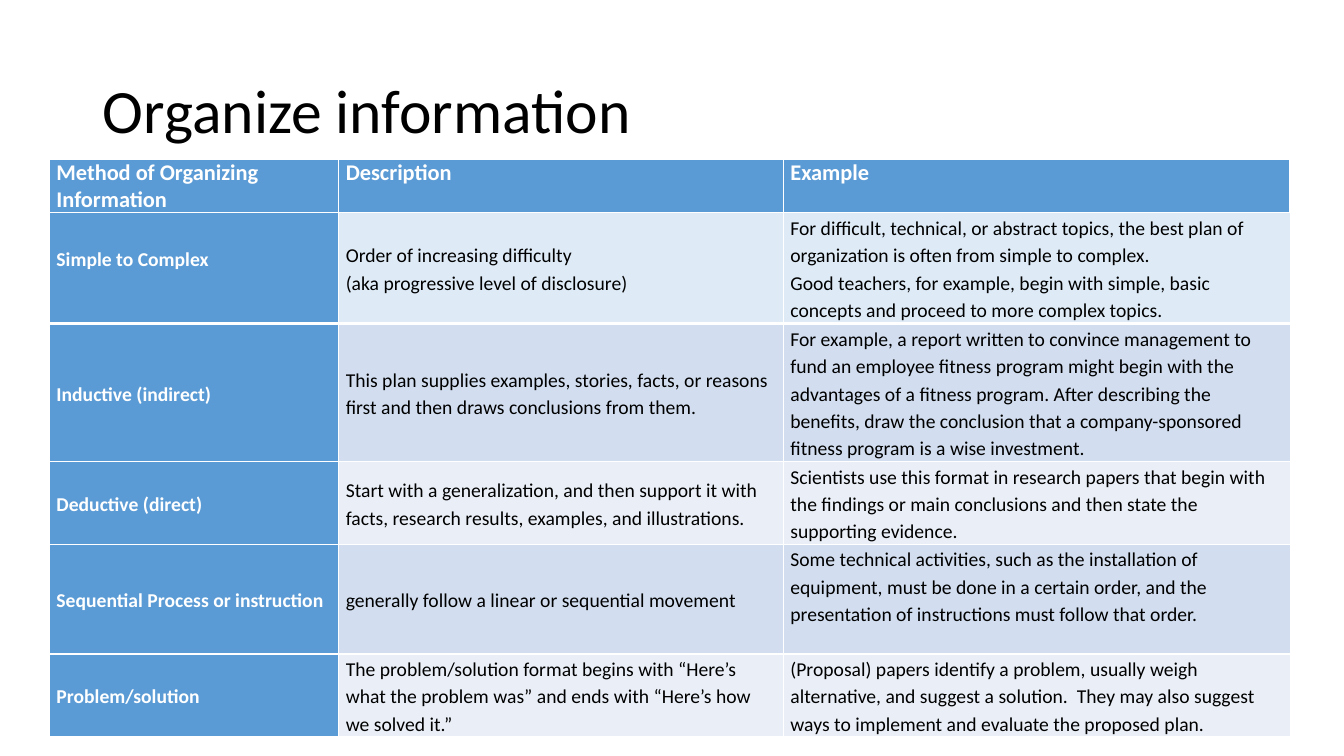
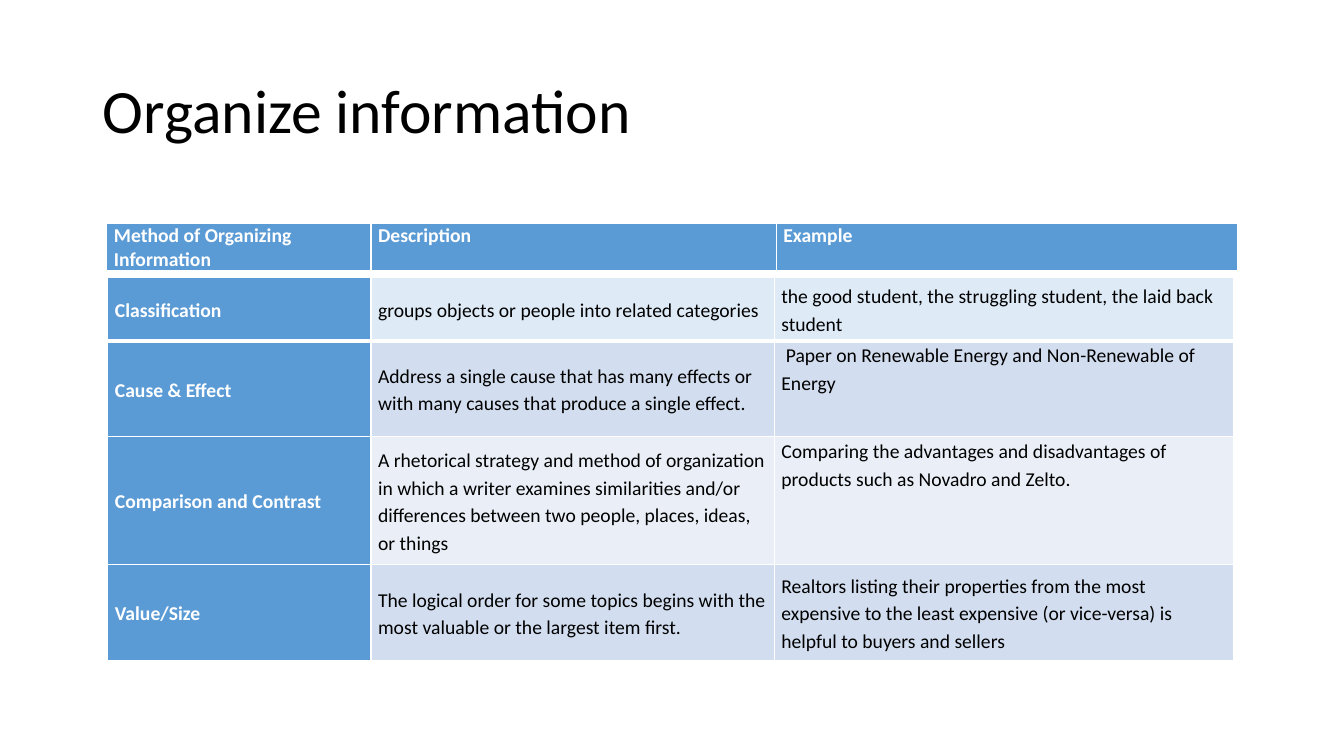
from dataclasses import dataclass

import pptx
import pptx.dml.color
import pptx.enum.text
import pptx.oxml.ns
import pptx.util
from lxml import etree

Inches, Pt = pptx.util.Inches, pptx.util.Pt
MSO_ANCHOR = pptx.enum.text.MSO_ANCHOR

# Shared look
COLORS = {
    "accent": "5B9BD5",
    "first": "DEEBF7",
    "dark_band": "D2DEEF",
    "light_band": "EAEFF7",
    "text": "000000",
    "white": "FFFFFF",
}
FONT = "Calibri"
TITLE = "Organize information"
TITLE_BOX = {"left": 0.92, "top": 0.4, "width": 11.5, "height": 1.45}
HEADINGS = ("Method of Organizing Information", "Description", "Example")
THIN, THICK = 1, 3


@dataclass
class Cell:
    text: str
    anchor: MSO_ANCHOR = MSO_ANCHOR.MIDDLE
    below: float = 0  # bottom margin in inches


@dataclass
class Row:
    height: float
    cells: tuple[Cell, ...]


@dataclass
class Grid:
    left: float
    top: float
    cols: tuple[float, ...]
    rows: list[Row]
    size: int = 14
    is_header: bool = False


def rgb(name: str) -> pptx.dml.color.RGBColor:
    return pptx.dml.color.RGBColor.from_string(COLORS[name])


def set_all(obj, values: dict) -> None:
    for key, value in values.items():
        setattr(obj, key, value)


def style_font(font, size: int, color: str, bold: bool = False) -> None:
    set_all(font, {"name": FONT, "size": Pt(size), "bold": bold})
    font.color.rgb = rgb(color)


def set_borders(cell, top: float, bottom: float) -> None:
    tc_pr = cell._tc.get_or_add_tcPr()
    qn = pptx.oxml.ns.qn
    for side, width in {"L": THIN, "R": THIN, "T": top, "B": bottom}.items():
        ln = etree.SubElement(tc_pr, qn(f"a:ln{side}"), w=str(int(Pt(width))))
        fill = etree.SubElement(ln, qn("a:solidFill"))
        etree.SubElement(fill, qn("a:srgbClr"), val=COLORS["white"])


def row_fill(index: int) -> str:
    if index == 0:
        return "first"
    return "dark_band" if index % 2 else "light_band"


def add_title(slide) -> None:
    sp = slide.shapes.title
    set_all(sp, {key: Inches(value) for key, value in TITLE_BOX.items()})
    tf = sp.text_frame
    tf.text = TITLE
    set_all(tf, {"word_wrap": True, "vertical_anchor": MSO_ANCHOR.MIDDLE,
                 "auto_size": pptx.enum.text.MSO_AUTO_SIZE.NONE})
    p = tf.paragraphs[0]
    set_all(p, {"alignment": pptx.enum.text.PP_ALIGN.LEFT, "line_spacing": 0.9})
    style_font(p.runs[0].font, 44, "text")


def fill_cell(cell, content: Cell, grid: Grid, i: int, j: int) -> None:
    label = grid.is_header or j == 0
    # Heavy rule under the heading and under the first body row
    set_borders(cell, THICK if i == 1 else THIN, THICK if i == 0 else THIN)
    cell.fill.solid()
    cell.fill.fore_color.rgb = rgb("accent" if label else row_fill(i))
    set_all(cell, {
        "margin_left": Inches(0.07), "margin_right": Inches(0.07),
        "margin_top": 0, "margin_bottom": Inches(content.below),
        "vertical_anchor": content.anchor,
    })
    cell.text_frame.text = content.text
    spacing = {"space_before": Pt(3)} if grid.is_header else {"line_spacing": 1.15}
    for p in cell.text_frame.paragraphs:
        set_all(p, spacing)
        for r in p.runs:
            style_font(r.font, grid.size, "white" if label else "text", label)


def add_grid(slide, grid: Grid) -> None:
    height = sum(row.height for row in grid.rows)
    table = slide.shapes.add_table(
        len(grid.rows), len(grid.cols), Inches(grid.left), Inches(grid.top),
        Inches(sum(grid.cols)), Inches(height)).table
    set_all(table, {"first_row": grid.is_header, "horz_banding": False})
    for j, width in enumerate(grid.cols):
        table.columns[j].width = Inches(width)
    for i, row in enumerate(grid.rows):
        table.rows[i].height = Inches(row.height)
        for j, content in enumerate(row.cells):
            fill_cell(table.cell(i, j), content, grid, i, j)


def header(left: float, top: float, cols: tuple[float, ...], height: float,
           size: int) -> Grid:
    cells = tuple(Cell(text, MSO_ANCHOR.TOP) for text in HEADINGS)
    return Grid(left, top, cols, [Row(height, cells)], size, True)


# Slide content: heading table, then body table
SLIDES = [
    (
        header(0.49, 1.58, (2.87, 4.41, 5.02), 0.53, 16),
        Grid(0.49, 2.11, (2.87, 4.41, 5.03), [
            Row(1.1, (
                Cell("Simple to Complex", below=0.2),
                Cell("Order of increasing difficulty\n"
                     "(aka progressive level of disclosure)"),
                Cell("For difficult, technical, or abstract topics, the best plan of "
                     "organization is often from simple to complex.\n"
                     "Good teachers, for example, begin with simple, basic concepts "
                     "and proceed to more complex topics."))),
            Row(1.37, (
                Cell("Inductive (indirect)"),
                Cell("This plan supplies examples, stories, facts, or reasons first "
                     "and then draws conclusions from them."),
                Cell("For example, a report written to convince management to fund an "
                     "employee fitness program might begin with the advantages of a "
                     "fitness program. After describing the benefits, draw the "
                     "conclusion that a company-sponsored fitness program is a wise "
                     "investment."))),
            Row(0.82, (
                Cell("Deductive (direct)"),
                Cell("Start with a generalization, and then support it with facts, "
                     "research results, examples, and illustrations."),
                Cell("Scientists use this format in research papers that begin with "
                     "the findings or main conclusions and then state the supporting "
                     "evidence."))),
            Row(1.09, (
                Cell("Sequential Process or instruction"),
                Cell("generally follow a linear or sequential movement"),
                Cell("Some technical activities, such as the installation of "
                     "equipment, must be done in a certain order, and the "
                     "presentation of instructions must follow that order.",
                     below=0.27))),
            Row(0.82, (
                Cell("Problem/solution"),
                Cell("The problem/solution format begins with “Here’s what the "
                     "problem was” and ends with “Here’s how we solved it.”"),
                Cell("(Proposal) papers identify a problem, usually weigh "
                     "alternative, and suggest a solution.  They may also suggest "
                     "ways to implement and evaluate the proposed plan."))),
        ]),
    ),
    (
        header(1.06, 2.22, (2.62, 4.02, 4.58), 0.47, 14),
        Grid(1.07, 2.75, (2.61, 4, 4.56), [
            Row(0.63, (
                Cell("Classification"),
                Cell("groups objects or people into related categories"),
                Cell("the good student, the struggling student, the laid "
                     "back student"))),
            Row(0.95, (
                Cell("Cause & Effect"),
                Cell("Address a single cause that has many effects or with many "
                     "causes that produce a single effect."),
                Cell(" Paper on Renewable Energy and Non-Renewable of Energy",
                     MSO_ANCHOR.TOP))),
            Row(1.27, (
                Cell("Comparison and Contrast"),
                Cell("A rhetorical strategy and method of organization in which a "
                     "writer examines similarities and/or differences between two "
                     "people, places, ideas, or things"),
                Cell("Comparing the advantages and disadvantages of products such as "
                     "Novadro and Zelto.", MSO_ANCHOR.TOP))),
            Row(0.95, (
                Cell("Value/Size"),
                Cell("The logical order for some topics begins with the most "
                     "valuable or the largest item first."),
                Cell("Realtors listing their properties from the most expensive to "
                     "the least expensive (or vice-versa) is helpful to buyers and "
                     "sellers"))),
        ]),
    ),
]


def main() -> None:
    prs = pptx.Presentation()
    set_all(prs, {"slide_width": Inches(13.33), "slide_height": Inches(7.5)})
    for grids in SLIDES:
        s = prs.slides.add_slide(prs.slide_layouts[5])
        add_title(s)
        for grid in grids:
            add_grid(s, grid)
    prs.save("out.pptx")


if __name__ == "__main__":
    main()
